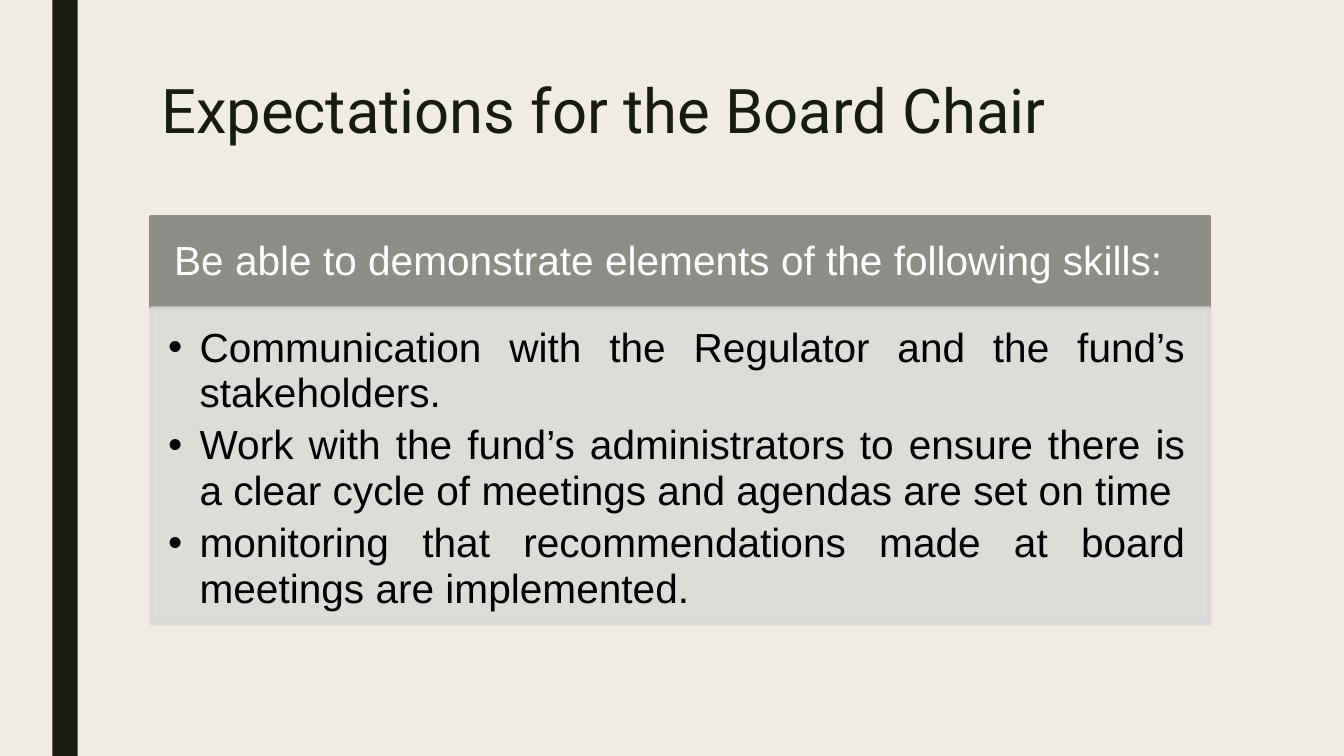
from dataclasses import dataclass

from lxml.etree import SubElement
from pptx import Presentation
from pptx.dml.color import RGBColor as Rgb
from pptx.enum.shapes import MSO_SHAPE as Preset
from pptx.enum.text import MSO_ANCHOR as Anchor, PP_ALIGN as Align
from pptx.oxml.ns import qn
from pptx.util import Cm, Pt


@dataclass(frozen=True)
class Theme:
    background: str = "EFEDE3"
    ink: str = "191B0E"
    header: str = "8C8D86"
    panel: str = "DADBD9"
    white: str = "FFFFFF"
    black: str = "000000"
    title_font: str = "Roboto"
    body_font: str = "Arial"
    title_size: int = 44
    body_size: int = 29
    border: float = 2.75


class SlideBuilder:
    def __init__(self, slide, theme):
        self.slide = slide
        self.theme = theme
        slide.background.fill.solid()
        slide.background.fill.fore_color.rgb = Rgb.from_string(theme.background)

    def box(self, bounds, color, bordered=True, opacity=100):
        block = self.slide.shapes.add_shape(Preset.RECTANGLE, *map(Cm, bounds))
        block.shadow.inherit = False
        fills = [block.fill]
        if bordered:
            block.line.width = Pt(self.theme.border)
            fills.append(block.line.fill)
        else:
            block.line.fill.background()
        for fill in fills:
            fill.solid()
            fill.fore_color.rgb = Rgb.from_string(color)
        if opacity < 100:
            for tint in block._element.spPr.iter(qn("a:srgbClr")):
                SubElement(tint, qn("a:alpha"), val=str(opacity * 1000))
        return block

    def frame(self, holder, insets, anchor=Anchor.TOP):
        area = holder.text_frame
        area.word_wrap = True
        area.vertical_anchor = anchor
        area.margin_left, area.margin_top, area.margin_right, area.margin_bottom = map(Cm, insets)
        return area

    def add_text(self, paragraph, text, font, size, color, spacing, align=Align.JUSTIFY):
        paragraph.alignment = align
        paragraph.line_spacing = spacing
        run = paragraph.add_run()
        run.text = text
        run.font.name = font
        run.font.size = Pt(size)
        run.font.color.rgb = Rgb.from_string(color)

    def title(self, bounds, text):
        heading = self.slide.shapes.add_textbox(*map(Cm, bounds))
        area = self.frame(heading, (0.25, 0.13, 0.25, 0.13))
        self.add_text(area.paragraphs[0], text, self.theme.title_font,
                      self.theme.title_size, self.theme.ink, 0.89, Align.LEFT)

    def header(self, bounds, text):
        band = self.box(bounds, self.theme.header)
        area = self.frame(band, (0.58, 0.33, 0.58, 0.33), Anchor.MIDDLE)
        self.add_text(area.paragraphs[0], text, self.theme.body_font,
                      self.theme.body_size, self.theme.white, 0.9)

    def bullets(self, bounds, items):
        panel = self.box(bounds, self.theme.panel, opacity=90)
        area = self.frame(panel, (0.43, 0.43, 0.58, 0.64))
        for index, item in enumerate(items):
            paragraph = area.add_paragraph() if index else area.paragraphs[0]
            self.add_text(paragraph, item, self.theme.body_font,
                          self.theme.body_size, self.theme.black, 0.94)
            paragraph.space_after = Pt(4.5)
            properties = paragraph._p.get_or_add_pPr()
            properties.set("marL", str(Cm(0.79)))
            properties.set("indent", str(Cm(-0.79)))
            SubElement(properties, qn("a:buFont"), typeface=self.theme.body_font)
            SubElement(properties, qn("a:buChar"), char="•")


def main():
    deck = Presentation()
    deck.slide_width, deck.slide_height = Cm(33.87), Cm(19.05)
    theme = Theme()
    builder = SlideBuilder(deck.slides.add_slide(deck.slide_layouts[6]), theme)

    left, width = 3.81, 26.67
    header_top, header_height = 5.46, 2.31

    builder.box((1.32, 0, 0.64, 19.05), theme.ink, bordered=False)
    builder.title((left, 1.9, width, 4.11), "Expectations for the Board Chair")
    builder.header((left, header_top, width, header_height),
                   "Be able to demonstrate elements of the following skills:")
    builder.bullets((left, header_top + header_height, width, 7.95), [
        "Communication with the Regulator and the fund’s stakeholders.",
        "Work with the fund’s administrators to ensure there is a clear cycle of "
        "meetings and agendas are set on time",
        "monitoring that recommendations made at board meetings are implemented.",
    ])
    deck.save("out.pptx")


if __name__ == "__main__":
    main()
